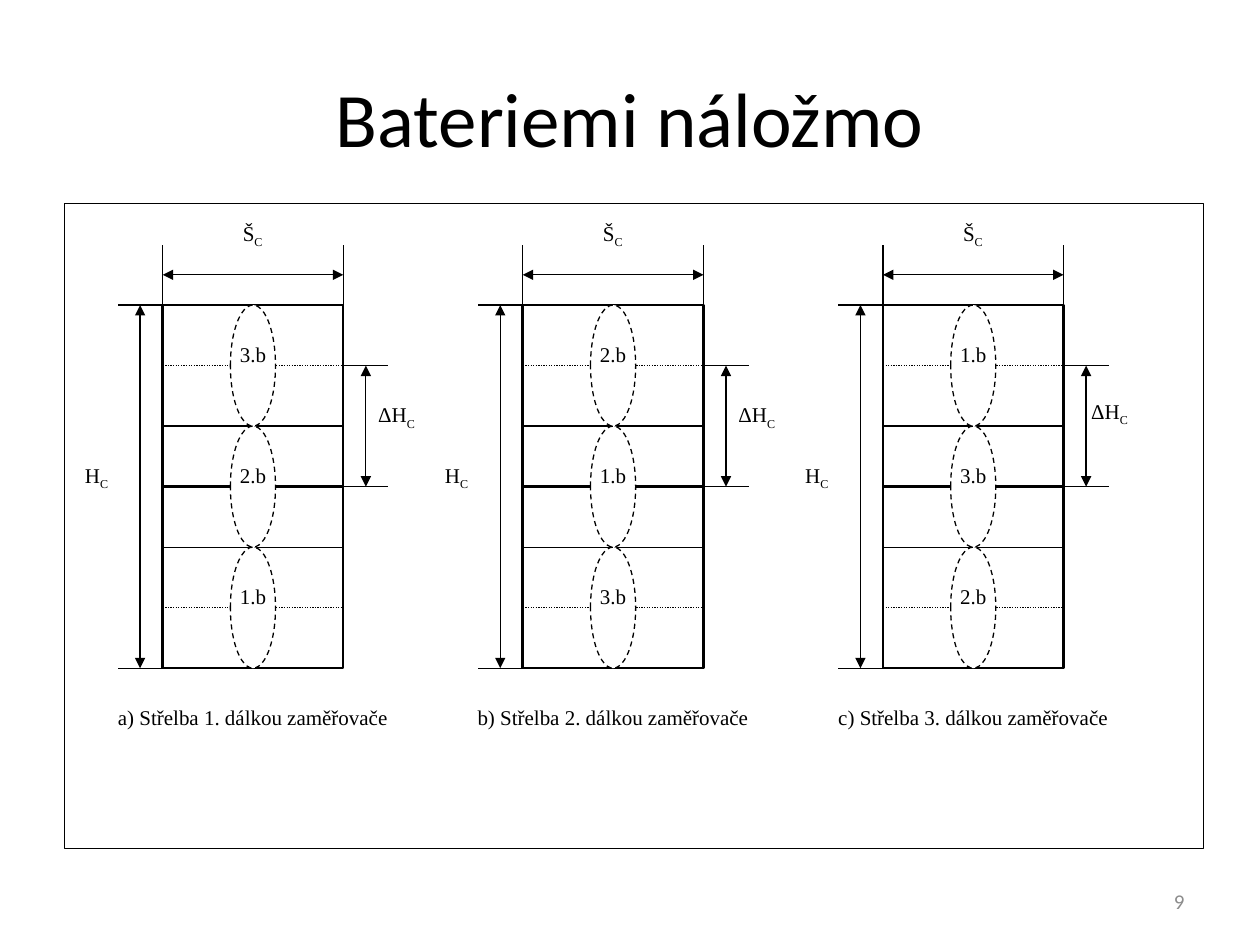
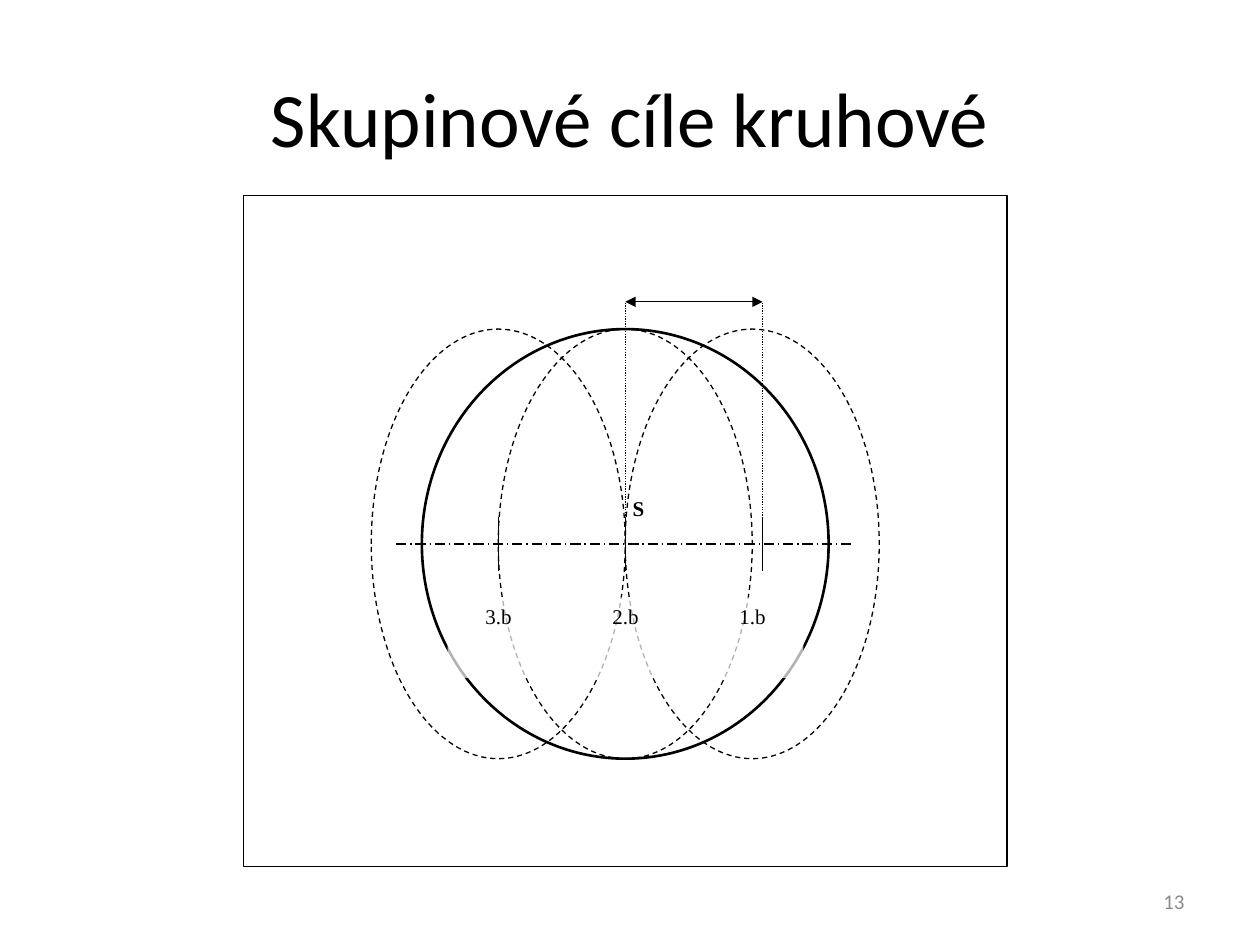
import lxml.etree
import pptx
import pptx.dml.color
import pptx.enum.dml
import pptx.enum.shapes
import pptx.enum.text
import pptx.oxml.ns
import pptx.util

Cm = pptx.util.Cm
qn = pptx.oxml.ns.qn
SHAPE = pptx.enum.shapes.MSO_SHAPE
DASH = pptx.enum.dml.MSO_LINE
ALIGN = pptx.enum.text.PP_ALIGN
ANCHOR = pptx.enum.text.MSO_ANCHOR

# Shared style
BLACK, WHITE, GREY = "000000", "FFFFFF", "8C8C8C"
TITLE_FONT, LABEL_FONT = "Calibri", "Times New Roman"
THIN, THICK = 0.75, 1.5
TITLE_BOX = (1.27, 0.76, 22.86, 3.18)
NUMBER_BOX = (18.21, 17.65, 5.92, 1.02)


def color(hex_string):
    return pptx.dml.color.RGBColor.from_string(hex_string)


def style_line(line, width, dash):
    line.color.rgb = color(BLACK)
    line.width = pptx.util.Pt(width)
    if dash is not None:
        line.dash_style = dash


def add_text(page, box, text, sub="", font=LABEL_FONT, size=12, ink=BLACK,
             align=ALIGN.LEFT, anchor=ANCHOR.TOP, bold=False):
    """Write one paragraph, with an optional subscript after it."""
    shape = page.shapes.add_textbox(*map(Cm, box))
    frame = shape.text_frame
    frame.word_wrap = True
    frame.vertical_anchor = anchor
    para = frame.paragraphs[0]
    para.alignment = align
    for words in filter(None, (text, sub)):
        span = para.add_run()
        span.text = words
        span.font.name = font
        span.font.size = pptx.util.Pt(size)
        span.font.bold = bold
        span.font.color.rgb = color(ink)
    if sub:
        span.font._element.set("baseline", "-25000")
    return shape


def add_outline(page, kind, box, width=THIN, dash=None, fill=None):
    shape = page.shapes.add_shape(kind, *map(Cm, box))
    shape.shadow.inherit = False
    if fill:
        shape.fill.solid()
        shape.fill.fore_color.rgb = color(fill)
    else:
        shape.fill.background()
    style_line(shape.line, width, dash)


def add_line(page, start, end, width=THIN, dash=None, arrows=False):
    line = page.shapes.add_connector(
        pptx.enum.shapes.MSO_CONNECTOR.STRAIGHT, *map(Cm, start + end))
    style_line(line.line, width, dash)
    if arrows:
        for tip in ("a:headEnd", "a:tailEnd"):
            lxml.etree.SubElement(line.line._get_or_add_ln(), qn(tip), type="triangle")
    lxml.etree.SubElement(line._element.spPr, qn("a:effectLst"))


def add_page(deck, title, number):
    page = deck.slides.add_slide(deck.slide_layouts[6])
    add_text(page, TITLE_BOX, title, font=TITLE_FONT, size=44,
             align=ALIGN.CENTER, anchor=ANCHOR.MIDDLE)
    add_text(page, NUMBER_BOX, number, font=TITLE_FONT, ink=GREY,
             align=ALIGN.RIGHT, anchor=ANCHOR.MIDDLE)
    return page


def draw_target(page, box, batteries, caption, delta_shift):
    """A target of six rows and four columns, shared by three batteries."""
    left, top, width, height = box
    right, bottom = left + width, top + height
    col, row = width / 4, height / 6
    add_outline(page, SHAPE.RECTANGLE, box, THICK, fill=WHITE)

    # Row lines: dotted, thin, thick, thin, dotted
    for step in range(1, 6):
        y = top + step * row
        add_line(page, (left, y), (right, y), THICK if step == 3 else THIN,
                 DASH.ROUND_DOT if step in (1, 5) else None)

    # Battery ellipses
    for index, battery in enumerate(batteries):
        y = top + 2 * index * row
        add_outline(page, SHAPE.OVAL, (left + 1.5 * col, y, col, 2 * row),
                    dash=DASH.DASH, fill=WHITE)
        add_text(page, (left + col, y + row / 2, 2 * col, row), battery,
                 align=ALIGN.CENTER)

    # Width dimension
    for x in (left, right):
        add_line(page, (x, top), (x, top - row))
    add_line(page, (left, top - row / 2), (right, top - row / 2), arrows=True)
    add_text(page, (left + 1.5 * col, top - 1.5 * row, 2 * col, 2 * row), "Š", sub="C")

    # Height dimension
    for y in (top, bottom):
        add_line(page, (left, y), (left - col, y))
    add_line(page, (left - col / 2, top), (left - col / 2, bottom), arrows=True)
    add_text(page, (left - 2 * col, top + 2.5 * row, 2.5 * col, 2 * row), "H", sub="C")

    # Distance between the aiming heights
    upper, middle = top + row, top + 3 * row
    for y in (upper, middle):
        add_line(page, (right, y), (right + col, y))
    x = right + col / 2
    add_line(page, (x, upper), (x, middle), arrows=True)
    shift_x, shift_y = delta_shift
    add_text(page, (x + shift_x, top + 1.5 * row + shift_y, 2.5 * col, 1.5 * row),
             "ΔH", sub="C")

    add_text(page, (left - 1.5 * col, bottom + row / 2, 7 * col, 2 * row), caption,
             align=ALIGN.CENTER)


def draw_circle_target(page, box):
    """A round target covered by three overlapping batteries."""
    left, top, width, height = box
    center_x, center_y = left + width / 2, top + height / 2 + 0.26
    radius_x, radius_y = 4.1, 4.33
    step, spread, tick = 2.56, 2.77, 0.55
    add_outline(page, SHAPE.RECTANGLE, box)
    add_outline(page, SHAPE.OVAL, (center_x - radius_x, center_y - radius_y,
                                   2 * radius_x, 2 * radius_y), THICK)

    # Axis with ticks
    add_line(page, (center_x - 4.62, center_y), (center_x + 4.62, center_y),
             dash=DASH.LONG_DASH_DOT)
    for x in (center_x - step, center_x, center_x + spread):
        add_line(page, (x, center_y - tick), (x, center_y + tick))
    add_text(page, (center_x - 1.02, center_y - 1.09, 2.57, 1.62), "S",
             align=ALIGN.CENTER, bold=True)

    # Spread dimension
    ruler = center_y - 4.88
    for x in (center_x, center_x + spread):
        add_line(page, (x, center_y), (x, ruler), dash=DASH.ROUND_DOT)
    add_line(page, (center_x, ruler), (center_x + spread, ruler), arrows=True)

    # Batteries, then their labels on translucent white
    centers = [center_x + offset * step for offset in (-1, 0, 1)]
    for x in centers:
        add_outline(page, SHAPE.OVAL, (x - step, center_y - radius_y,
                                       2 * step, 2 * radius_y), dash=DASH.DASH)
    for x, battery in zip(centers, ("3.b", "2.b", "1.b")):
        label = add_text(page, (x - 1.02, center_y + 1.08, 2.05, 1.62), battery,
                         align=ALIGN.CENTER)
        label.fill.solid()
        label.fill.fore_color.rgb = color(WHITE)
        tint = label._element.spPr.find(".//" + qn("a:srgbClr"))
        lxml.etree.SubElement(tint, qn("a:alpha"), val="70000")


def build_batteries(deck):
    page = add_page(deck, "Bateriemi náložmo", "9")
    add_outline(page, SHAPE.RECTANGLE, (1.3, 4.11, 22.96, 13))
    targets = [
        (("3.b", "2.b", "1.b"), "a) Střelba 1. dálkou zaměřovače", (0, 0)),
        (("2.b", "1.b", "3.b"), "b) Střelba 2. dálkou zaměřovače", (0, 0)),
        (("1.b", "3.b", "2.b"), "c) Střelba 3. dálkou zaměřovače", (-0.15, -0.08)),
    ]
    for index, target in enumerate(targets):
        draw_target(page, (3.28 + index * 7.26, 6.15, 3.64, 7.32), *target)


def build_circle(deck):
    page = add_page(deck, "Skupinové cíle kruhové", "13")
    draw_circle_target(page, (4.91, 3.94, 15.39, 13.53))


def main():
    deck = pptx.Presentation()
    deck.slide_width, deck.slide_height = Cm(25.4), Cm(19.05)
    build_batteries(deck)
    build_circle(deck)
    deck.save("out.pptx")


if __name__ == "__main__":
    main()
